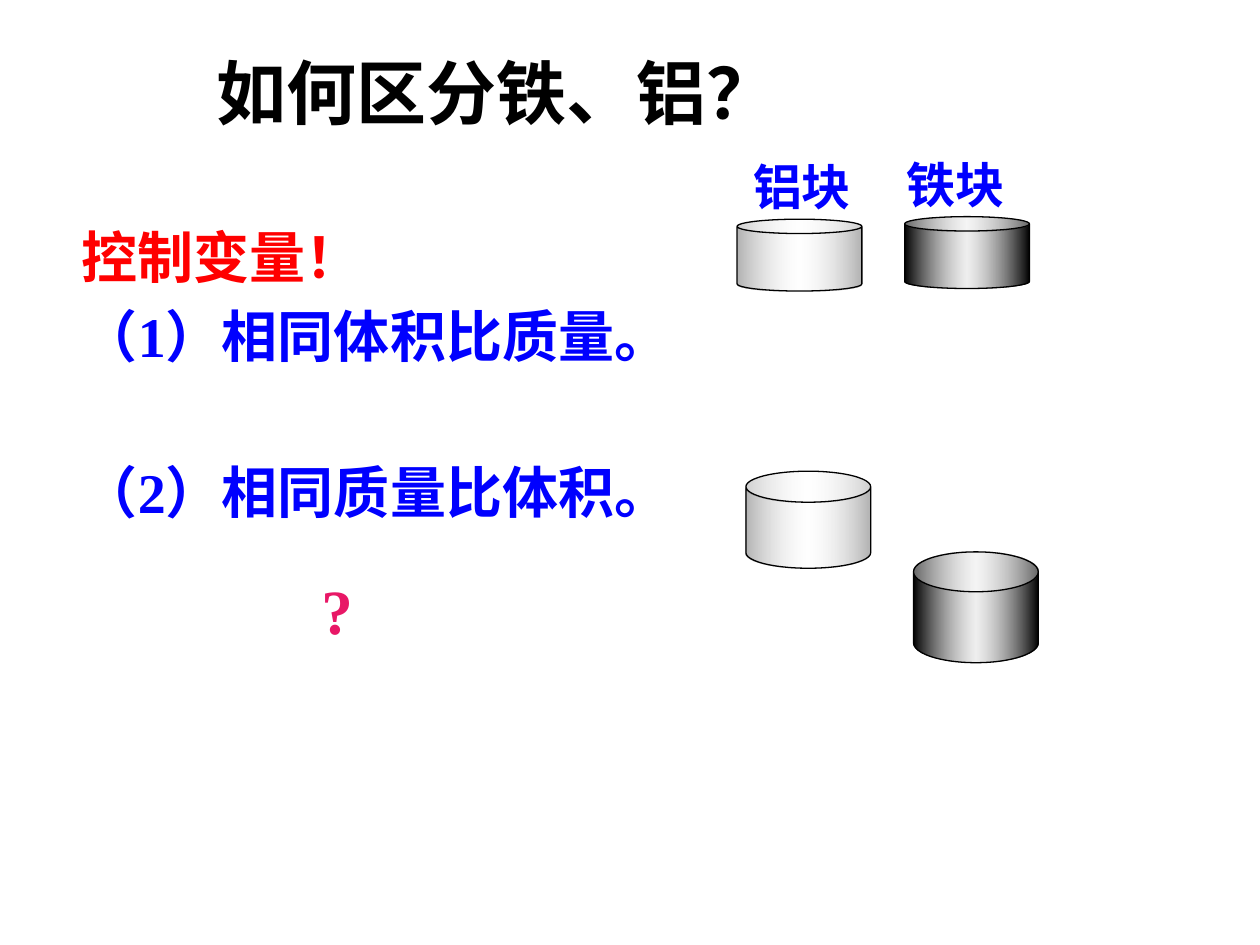
from dataclasses import dataclass

import pptx
import pptx.dml.color
import pptx.enum.shapes
import pptx.enum.text
import pptx.oxml
import pptx.oxml.ns
import pptx.util
from pptx.util import Inches

ALIGN = pptx.enum.text.PP_ALIGN


@dataclass(frozen=True)
class Theme:
    font: str = "Times New Roman"
    black: str = "000000"
    red: str = "FF0000"
    blue: str = "0000FF"
    pink: str = "E81766"
    aluminium: tuple = ("B2B2B2", "FFFFFF")
    iron: tuple = ("000000", "B2B2B2")
    title_size: int = 40
    question_size: int = 36
    body_size: int = 32
    label_size: int = 28


THEME = Theme()


def rgb(color):
    return pptx.dml.color.RGBColor.from_string(color)


def place(shape, left, top, width, height):
    shape.left, shape.top = Inches(left), Inches(top)
    shape.width, shape.height = Inches(width), Inches(height)


def write(para, text, size, color, align=ALIGN.LEFT, space_before=0):
    para.text = text
    para.alignment = align
    para.space_before = pptx.util.Pt(space_before)
    para.font.name = THEME.font
    para.font.size = pptx.util.Pt(size)
    para.font.bold = True
    para.font.color.rgb = rgb(color)


def add_title(page, text):
    title = page.shapes.title
    place(title, 1.62, 0.28, 7.76, 0.89)
    frame = title.text_frame
    frame.auto_size = pptx.enum.text.MSO_AUTO_SIZE.NONE
    frame.vertical_anchor = pptx.enum.text.MSO_ANCHOR.MIDDLE
    write(frame.paragraphs[0], text, THEME.title_size, THEME.black)


def add_box(page, left, top, width, height, wrap=True):
    box = page.shapes.add_textbox(*map(Inches, (left, top, width, height)))
    box.text_frame.word_wrap = wrap
    return box.text_frame


def add_body(page, lines):
    """Add lines given as (text, color, space before in points)."""
    frame = add_box(page, 0.17, 1.72, 5.39, 2.99)
    frame.margin_left = Inches(0.48)
    for index, (text, color, gap) in enumerate(lines):
        para = frame.add_paragraph() if index else frame.paragraphs[0]
        write(para, text, THEME.body_size, color, space_before=gap)


def add_label(page, text, left, top):
    frame = add_box(page, left, top, 1.37, 0.57)
    write(frame.paragraphs[0], text, THEME.label_size, THEME.blue, ALIGN.CENTER)


def add_question(page):
    frame = add_box(page, 1.52, 4.49, 2.31, 2.58, wrap=False)
    write(frame.paragraphs[0], "?", THEME.question_size, THEME.pink, ALIGN.CENTER)


def fill_metal(shape, edge, middle):
    """Shade from side to side, with a see-through highlight in the middle."""
    gradient = pptx.oxml.parse_xml(
        f'<a:gradFill {pptx.oxml.ns.nsdecls("a")} rotWithShape="1"><a:gsLst>'
        f'<a:gs pos="0"><a:srgbClr val="{edge}"/></a:gs>'
        f'<a:gs pos="50000"><a:srgbClr val="{middle}"><a:alpha val="20000"/></a:srgbClr></a:gs>'
        f'<a:gs pos="100000"><a:srgbClr val="{edge}"/></a:gs>'
        '</a:gsLst><a:lin ang="0" scaled="1"/></a:gradFill>'
    )
    geometry = shape.element.spPr.find(pptx.oxml.ns.qn("a:prstGeom"))
    geometry.addnext(gradient)


def add_block(page, metal, left, top, height, rim):
    can = page.shapes.add_shape(
        pptx.enum.shapes.MSO_SHAPE.CAN, *map(Inches, (left, top, 0.99, height))
    )
    can.adjustments[0] = rim
    can.shadow.inherit = False
    can.line.color.rgb = rgb(THEME.black)
    can.line.width = pptx.util.Pt(0.75)
    fill_metal(can, *metal)


def main():
    deck = pptx.Presentation()
    deck.slide_width, deck.slide_height = Inches(10), Inches(7.5)
    page = deck.slides.add_slide(deck.slide_layouts.get_by_name("Title Only"))

    add_title(page, "如何区分铁、铝？")
    add_body(page, [
        ("控制变量！", THEME.red, 0),
        ("（1）相同体积比质量。", THEME.blue, 6.4),
        ("（2）相同质量比体积。", THEME.blue, 51),
    ])
    add_question(page)
    add_label(page, "铝块", 5.68, 1.19)
    add_label(page, "铁块", 6.9, 1.18)

    for metal, left, top, height, rim in (
        (THEME.aluminium, 5.85, 1.74, 0.57, 0.2),
        (THEME.iron, 7.18, 1.72, 0.57, 0.2),
        (THEME.aluminium, 5.92, 3.74, 0.77, 0.32),
        (THEME.iron, 7.25, 4.38, 0.88, 0.36),
    ):
        add_block(page, metal, left, top, height, rim)

    deck.save("out.pptx")


if __name__ == "__main__":
    main()
